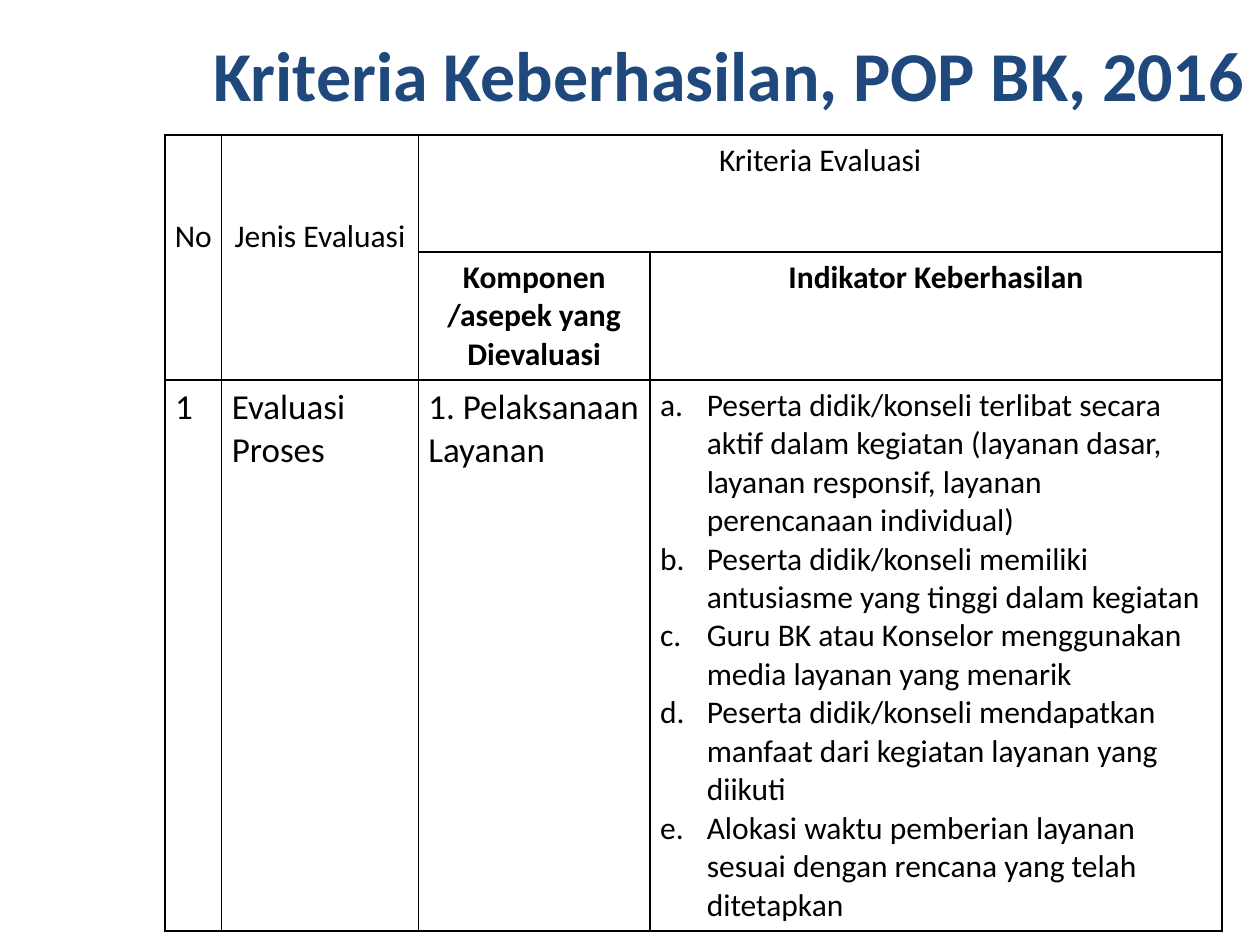
import copy

import pptx
import pptx.dml.color
import pptx.enum.text
import pptx.oxml
import pptx.oxml.ns
import pptx.util
from pptx.util import Inches

COLORS = {"title": "1F497D", "text": "000000", "border": "000000"}
FONT = "Calibri"
CENTER = pptx.enum.text.PP_ALIGN.CENTER
LEFT = pptx.enum.text.PP_ALIGN.LEFT
MIDDLE = pptx.enum.text.MSO_ANCHOR.MIDDLE

COLUMN_WIDTHS = [0.45, 1.56, 1.84, 4.54]
ROW_HEIGHTS = [0.93, 0.93, 4.25]
INDICATORS = [
    "Peserta didik/konseli terlibat secara aktif dalam kegiatan "
    "(layanan dasar, layanan responsif, layanan perencanaan individual)",
    "Peserta didik/konseli memiliki antusiasme yang tinggi dalam kegiatan",
    "Guru BK atau Konselor menggunakan media layanan yang menarik",
    "Peserta didik/konseli mendapatkan manfaat dari kegiatan layanan yang diikuti",
    "Alokasi waktu pemberian layanan sesuai dengan rencana yang telah ditetapkan",
]


def write(para, text, size=18, bold=False, color="text", align=LEFT):
    para.alignment = align
    span = para.add_run()
    span.text = text
    span.font.name = FONT
    span.font.size = pptx.util.Pt(size)
    span.font.bold = bold
    span.font.color.rgb = pptx.dml.color.RGBColor.from_string(COLORS[color])
    return span


def letter(para, indent=0.37):
    """Number the paragraph a., b., c. with a hanging indent."""
    properties = para._p.get_or_add_pPr()
    properties.set("marL", str(Inches(indent)))
    properties.set("indent", str(Inches(-indent)))
    bullet = pptx.oxml.parse_xml(
        f'<a:buAutoNum {pptx.oxml.ns.nsdecls("a")} type="alphaLcPeriod"/>')
    properties.append(bullet)


def end_with_break(para, span):
    """Close the paragraph with a line break as tall as the span's text."""
    para.add_line_break()
    style = span.font._element
    para._p[-1].append(copy.deepcopy(style))
    ending = pptx.oxml.parse_xml(
        f'<a:endParaRPr {pptx.oxml.ns.nsdecls("a")} sz="{style.get("sz")}"/>')
    para._p.append(ending)


def style_cell(cell):
    """Clear the fill, set the insets and draw all four borders."""
    cell.fill.background()
    cell.margin_left = cell.margin_right = Inches(0.08)
    cell.margin_top = cell.margin_bottom = Inches(0.05)
    properties = cell._tc.get_or_add_tcPr()
    for index, side in enumerate("LRTB"):
        properties.insert(index, pptx.oxml.parse_xml(
            f'<a:ln{side} {pptx.oxml.ns.nsdecls("a")} w="{pptx.util.Pt(1)}">'
            f'<a:solidFill><a:srgbClr val="{COLORS["border"]}"/></a:solidFill>'
            f'</a:ln{side}>'))


def add_title(page, text):
    box = page.shapes.add_textbox(
        Inches(1.06), Inches(0.42), Inches(9.45), Inches(1))
    box.text_frame.word_wrap = True
    box.text_frame.vertical_anchor = MIDDLE
    para = box.text_frame.paragraphs[0]
    span = write(para, text, size=40, bold=True, color="title", align=CENTER)
    end_with_break(para, span)


def add_criteria_table(page):
    frame = page.shapes.add_table(
        len(ROW_HEIGHTS), len(COLUMN_WIDTHS), Inches(1.31), Inches(1.07),
        Inches(sum(COLUMN_WIDTHS)), Inches(sum(ROW_HEIGHTS)))
    table = frame.table
    table.first_row = table.horz_banding = False
    for column, width in zip(table.columns, COLUMN_WIDTHS):
        column.width = Inches(width)
    for row, height in zip(table.rows, ROW_HEIGHTS):
        row.height = Inches(height)
    for cell in table.iter_cells():
        style_cell(cell)

    for column, heading in enumerate(["No", "Jenis Evaluasi"]):
        cell = table.cell(0, column)
        cell.merge(table.cell(1, column))
        cell.margin_top = Inches(0.66)
        cell.margin_left = cell.margin_right = Inches(0.06)
        write(cell.text_frame.paragraphs[0], heading, align=CENTER)

    table.cell(0, 2).merge(table.cell(0, 3))
    write(table.cell(0, 2).text_frame.paragraphs[0], "Kriteria Evaluasi",
          align=CENTER)
    subheadings = ["Komponen /asepek yang Dievaluasi", "Indikator Keberhasilan"]
    for column, heading in enumerate(subheadings, start=2):
        write(table.cell(1, column).text_frame.paragraphs[0], heading,
              bold=True, align=CENTER)

    entries = ["1", "Evaluasi Proses", "1. Pelaksanaan Layanan"]
    for column, entry in enumerate(entries):
        write(table.cell(2, column).text_frame.paragraphs[0], entry, size=20)

    indicator_text = table.cell(2, 3).text_frame
    for index, indicator in enumerate(INDICATORS):
        para = indicator_text.add_paragraph() if index else indicator_text.paragraphs[0]
        write(para, indicator)
        letter(para)


def main():
    deck = pptx.Presentation()
    deck.slide_width, deck.slide_height = Inches(10), Inches(7.5)
    page = deck.slides.add_slide(deck.slide_layouts[6])
    add_criteria_table(page)
    add_title(page, "Kriteria Keberhasilan, POP BK, 2016")
    deck.save("out.pptx")


if __name__ == "__main__":
    main()
